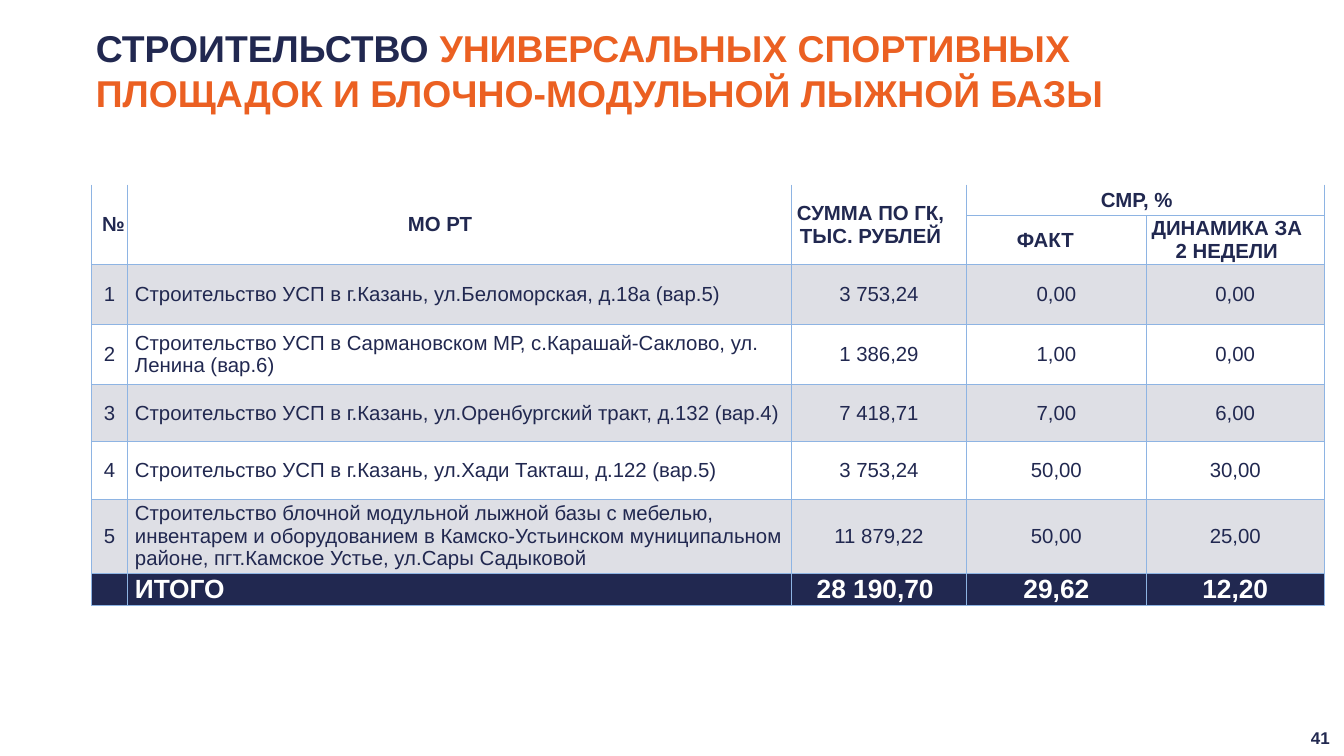
from dataclasses import dataclass

from lxml import etree
from pptx import Presentation
from pptx.dml.color import RGBColor
from pptx.enum.shapes import MSO_SHAPE
from pptx.enum.text import MSO_ANCHOR, PP_ALIGN
from pptx.oxml.ns import qn
from pptx.util import Pt

LEFT, MID, RIGHT = PP_ALIGN.LEFT, PP_ALIGN.CENTER, PP_ALIGN.RIGHT
TOP, MIDDLE = MSO_ANCHOR.TOP, MSO_ANCHOR.MIDDLE
ROUND = MSO_SHAPE.ROUNDED_RECTANGLE


@dataclass(frozen=True)
class Theme:
    font: str = "Arial"
    navy: str = "212850"
    orange: str = "EB6022"
    grey: str = "DEDFE5"
    white: str = "FFFFFF"
    rule: str = "8EB4E3"
    title: float = 44
    body: float = 24
    total: float = 31
    page: float = 20


@dataclass(frozen=True)
class Look:
    size: float
    color: str
    bold: bool = False
    align: PP_ALIGN = MID
    left: float = 0
    right: float = 0


@dataclass(frozen=True)
class Head:
    row: int
    col: int
    text: str
    look: Look
    rows: int = 1
    cols: int = 1


@dataclass(frozen=True)
class Site:
    name: str
    cost: str
    fact: str
    gain: str


THEME = Theme()
HEAD = Look(THEME.body, THEME.navy, True, right=20)
BODY = Look(THEME.body, THEME.navy)
NAME = Look(THEME.body, THEME.navy, align=LEFT, left=9)
TOTAL = Look(THEME.total, THEME.white, True)

COLS = [42, 782.5, 206, 212, 209.5]
ROWS = [36.5, 58, 70.5, 70.5, 67.5, 67.5, 87.5, 38]

HEADS = [
    Head(0, 0, "№", Look(THEME.body, THEME.navy, True, RIGHT, right=3), rows=2),
    Head(0, 1, "МО РТ", Look(THEME.body, THEME.navy, True, right=46), rows=2),
    Head(0, 2, "СУММА ПО ГК,\nТЫС. РУБЛЕЙ", HEAD, rows=2),
    Head(0, 3, "СМР, %", HEAD, cols=2),
    Head(1, 3, "ФАКТ", Look(THEME.body, THEME.navy, True, right=26)),
    Head(1, 4, "ДИНАМИКА ЗА\n2 НЕДЕЛИ", HEAD),
]
SITES = [
    Site("Строительство УСП в г.Казань, ул.Беломорская, д.18а (вар.5)",
         "3 753,24", "0,00", "0,00"),
    Site("Строительство УСП в Сармановском МР, с.Карашай-Саклово, ул. Ленина (вар.6)",
         "1 386,29", "1,00", "0,00"),
    Site("Строительство УСП в г.Казань, ул.Оренбургский тракт, д.132 (вар.4)",
         "7 418,71", "7,00", "6,00"),
    Site("Строительство УСП в г.Казань, ул.Хади Такташ, д.122 (вар.5)",
         "3 753,24", "50,00", "30,00"),
    Site("Строительство блочной модульной лыжной базы с мебелью, инвентарем и "
         "оборудованием в Камско-Устьинском муниципальном районе, "
         "пгт.Камское Устье, ул.Сары Садыковой",
         "11 879,22", "50,00", "25,00"),
]
SUMS = [
    ("", TOTAL),
    ("ИТОГО", Look(THEME.total, THEME.white, True, LEFT, left=9)),
    ("28 190,70", Look(THEME.total, THEME.white, True, right=9)),
    ("29,62", TOTAL),
    ("12,20", TOTAL),
]


def style(para, look: Look) -> None:
    para.alignment = look.align
    font = para.font
    font.name, font.size, font.bold = THEME.font, Pt(look.size), look.bold
    font.color.rgb = RGBColor.from_string(look.color)


def add_title(slide) -> None:
    box = slide.shapes.add_textbox(Pt(113), Pt(28), Pt(1230), Pt(108))
    frame = box.text_frame
    frame.word_wrap = True
    frame.vertical_anchor = TOP
    frame.margin_left = frame.margin_right = frame.margin_bottom = 0
    frame.margin_top = Pt(1.5)
    para = frame.paragraphs[0]
    style(para, Look(THEME.title, THEME.navy, True, LEFT))
    para.add_run().text = "СТРОИТЕЛЬСТВО "
    run = para.add_run()
    run.text = "УНИВЕРСАЛЬНЫХ СПОРТИВНЫХ ПЛОЩАДОК И БЛОЧНО-МОДУЛЬНОЙ ЛЫЖНОЙ БАЗЫ"
    run.font.color.rgb = RGBColor.from_string(THEME.orange)


def add_page(slide) -> None:
    badge = slide.shapes.add_shape(ROUND, Pt(1529.5), Pt(847.5), Pt(52), Pt(42.5))
    badge.shadow.inherit = False
    badge.fill.background()
    badge.line.fill.background()
    frame = badge.text_frame
    frame.vertical_anchor = MIDDLE
    para = frame.paragraphs[0]
    para.text = "41"
    style(para, Look(THEME.page, THEME.navy, True))


def rule_cell(cell, top: bool) -> None:
    """Draw thin rules round a cell, with the upper one optional."""
    props = cell._tc.get_or_add_tcPr()
    for side in ("lnL", "lnR", "lnT", "lnB"):
        line = etree.SubElement(props, qn(f"a:{side}"), w=str(Pt(1)))
        if side == "lnT" and not top:
            etree.SubElement(line, qn("a:noFill"))
        else:
            fill = etree.SubElement(line, qn("a:solidFill"))
            etree.SubElement(fill, qn("a:srgbClr"), val=THEME.rule)


def fill_cell(cell, text: str, look: Look) -> None:
    cell.vertical_anchor = MIDDLE
    cell.margin_left, cell.margin_right = Pt(look.left), Pt(look.right)
    cell.margin_top = cell.margin_bottom = 0
    cell.text_frame.text = text
    for para in cell.text_frame.paragraphs:
        style(para, look)


def tint(row: int) -> str | None:
    if row == len(ROWS) - 1:
        return THEME.navy
    return THEME.grey if row >= 2 and row % 2 == 0 else None


def add_grid(slide) -> None:
    grid = slide.shapes.add_table(len(ROWS), len(COLS), Pt(108), Pt(217.4),
                                  Pt(sum(COLS)), Pt(sum(ROWS))).table
    grid.first_row = grid.horz_banding = False
    for col, width in zip(grid.columns, COLS):
        col.width = Pt(width)
    for i, height in enumerate(ROWS):
        grid.rows[i].height = Pt(height)
        color = tint(i)
        for j in range(len(COLS)):
            cell = grid.cell(i, j)
            rule_cell(cell, i > 0)
            if color:
                cell.fill.solid()
                cell.fill.fore_color.rgb = RGBColor.from_string(color)
            else:
                cell.fill.background()

    for head in HEADS:
        cell = grid.cell(head.row, head.col)
        if head.rows * head.cols > 1:
            cell.merge(grid.cell(head.row + head.rows - 1, head.col + head.cols - 1))
        fill_cell(cell, head.text, head.look)
    for num, site in enumerate(SITES, 1):
        texts = (str(num), site.name, site.cost, site.fact, site.gain)
        for j, text in enumerate(texts):
            fill_cell(grid.cell(num + 1, j), text, NAME if j == 1 else BODY)
    for j, (text, look) in enumerate(SUMS):
        fill_cell(grid.cell(len(ROWS) - 1, j), text, look)


def main() -> None:
    deck = Presentation()
    deck.slide_width, deck.slide_height = Pt(1583.28), Pt(890.64)
    slide = deck.slides.add_slide(deck.slide_layouts[6])
    add_page(slide)
    add_title(slide)
    add_grid(slide)
    deck.save("out.pptx")


if __name__ == "__main__":
    main()
